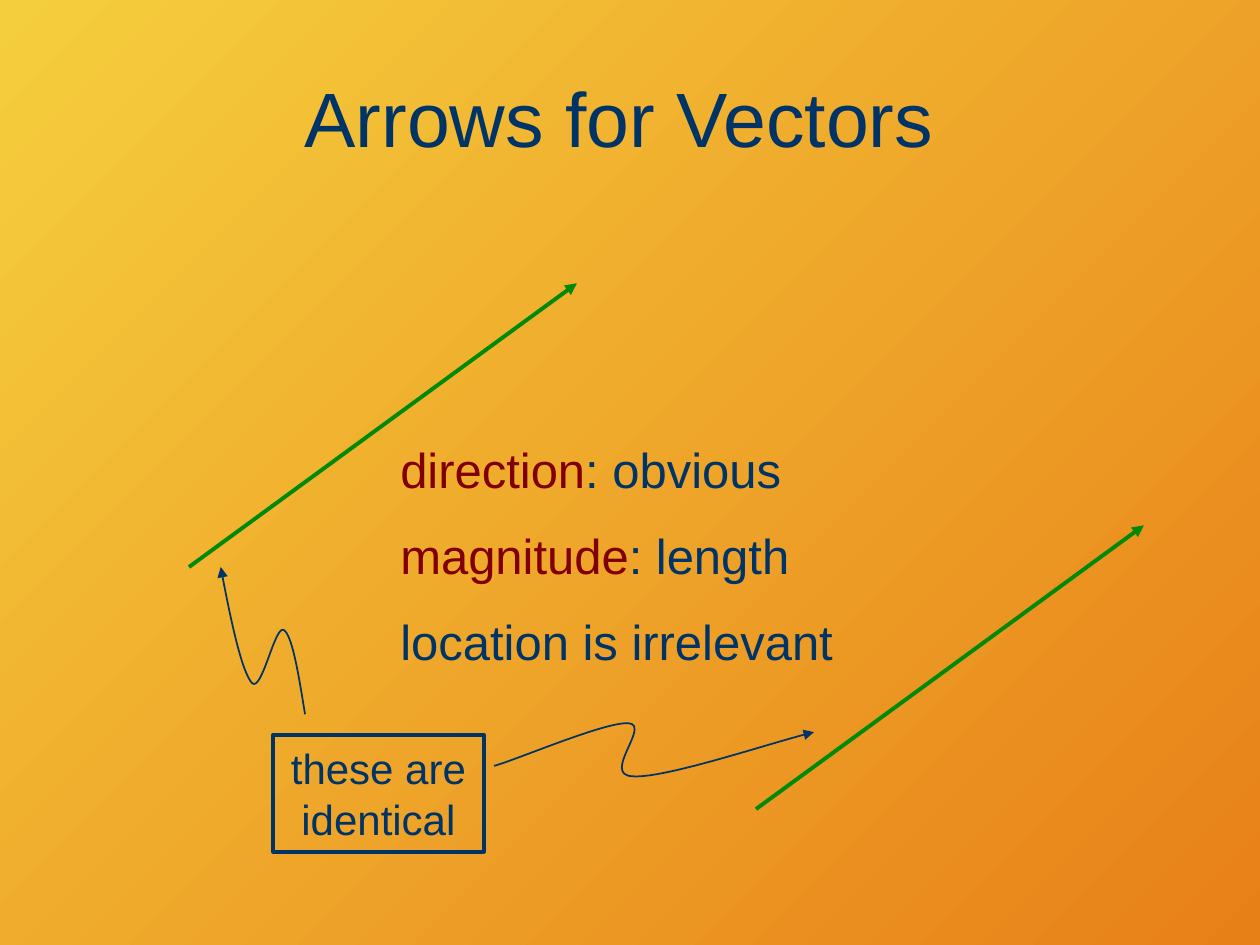
from dataclasses import dataclass

import pptx
import pptx.dml.color
import pptx.enum.shapes
import pptx.enum.text
import pptx.oxml.ns
import pptx.oxml.xmlchemy
import pptx.util

Cm = pptx.util.Cm
Point = tuple[float, float]
PARAGRAPH_ALIGN = pptx.enum.text.PP_ALIGN


@dataclass(frozen=True)
class Theme:
    font: str = "Arial"
    navy: str = "003366"
    maroon: str = "800000"
    green: str = "008901"
    yellow: str = "F5CE3D"
    orange: str = "E88018"
    title_size: float = 44
    body_size: float = 28
    label_size: float = 24
    thick_line: float = 2.25
    thin_line: float = 1


@dataclass(frozen=True)
class Run:
    text: str
    color: str


@dataclass(frozen=True)
class Box:
    left: float
    top: float
    width: float
    height: float

    def lengths(self) -> list[int]:
        return [Cm(value) for value in (self.left, self.top, self.width, self.height)]


THEME = Theme()

# Content, in centimetres
TITLE_BOX = Box(1.27, 0.76, 22.86, 3.18)
PROPERTIES_BOX = Box(7.82, 8.69, 11.23, 5.0)
LABEL_BOX = Box(5.51, 14.81, 4.24, 2.36)
VECTOR = (7.82, -5.72)
VECTOR_STARTS = [(3.81, 11.43), (15.24, 16.31)]
PROPERTIES = [
    [Run("direction", THEME.maroon), Run(": obvious", THEME.navy)],
    [Run("magnitude", THEME.maroon), Run(": length", THEME.navy)],
    [Run("location is irrelevant", THEME.navy)],
]
# Each pointer is a start point followed by triples of Bézier points
POINTERS = [
    [(6.15, 14.4),
     (6.02, 13.59), (5.89, 12.8), (5.72, 12.7),
     (5.54, 12.6), (5.28, 13.97), (5.08, 13.77),
     (4.88, 13.54), (4.65, 12.5), (4.45, 11.43)],
    [(9.96, 15.44),
     (10.41, 15.32), (12.19, 14.55), (12.67, 14.58),
     (13.13, 14.61), (12.12, 15.62), (12.75, 15.65),
     (13.36, 15.7), (15.65, 14.94), (16.41, 14.76)],
]


def rgb(color: str) -> pptx.dml.color.RGBColor:
    return pptx.dml.color.RGBColor.from_string(color)


def new_element(tag: str):
    return pptx.oxml.xmlchemy.OxmlElement(tag)


def write_text(shape, paragraphs: list[list[Run]], *, size: float,
               align=PARAGRAPH_ALIGN.LEFT, gap: float = 0) -> None:
    """Fill a shape with paragraphs, with a gap in points between them."""
    frame = shape.text_frame
    frame.word_wrap = True
    frame.vertical_anchor = pptx.enum.text.MSO_ANCHOR.MIDDLE
    for index, runs in enumerate(paragraphs):
        paragraph = frame.add_paragraph() if index else frame.paragraphs[0]
        paragraph.alignment = align
        paragraph.space_before = pptx.util.Pt(gap if index else 0)
        for item in runs:
            run = paragraph.add_run()
            run.text = item.text
            run.font.name = THEME.font
            run.font.size = pptx.util.Pt(size)
            run.font.color.rgb = rgb(item.color)


def style_line(shape, color: str, width: float) -> None:
    shape.line.color.rgb = rgb(color)
    shape.line.width = pptx.util.Pt(width)


def add_arrowhead(shape) -> None:
    """Put a triangle at the end of the line and remove its shadow."""
    properties = shape.element.spPr
    line = properties.find(pptx.oxml.ns.qn("a:ln"))
    arrowhead = new_element("a:tailEnd")
    arrowhead.set("type", "triangle")
    line.append(arrowhead)
    if properties.find(pptx.oxml.ns.qn("a:effectLst")) is None:
        properties.append(new_element("a:effectLst"))


def add_vector(slide, start: Point) -> None:
    end = (start[0] + VECTOR[0], start[1] + VECTOR[1])
    connector = slide.shapes.add_connector(
        pptx.enum.shapes.MSO_CONNECTOR.STRAIGHT,
        *(Cm(value) for value in start + end))
    style_line(connector, THEME.green, THEME.thick_line)
    add_arrowhead(connector)


def add_pointer(slide, points: list[Point]) -> None:
    start, *rest = [(Cm(x), Cm(y)) for x, y in points]
    builder = slide.shapes.build_freeform(*start)
    builder.add_line_segments(rest, close=False)
    shape = builder.convert_to_shape()
    # Turn every three straight segments into one cubic curve
    segments = list(shape.element.iter(pptx.oxml.ns.qn("a:lnTo")))
    for first in range(0, len(segments), 3):
        curve = new_element("a:cubicBezTo")
        segments[first].addprevious(curve)
        for segment in segments[first:first + 3]:
            curve.append(segment[0])
            segment.getparent().remove(segment)
    shape.fill.background()
    shape.shadow.inherit = False
    style_line(shape, THEME.navy, THEME.thin_line)
    add_arrowhead(shape)


def add_background(slide) -> None:
    fill = slide.background.fill
    fill.gradient()
    fill.gradient_angle = 315
    for stop, color, position in zip(fill.gradient_stops, (THEME.yellow, THEME.orange), (0, 1)):
        stop.color.rgb = rgb(color)
        stop.position = position


def main() -> None:
    presentation = pptx.Presentation()
    presentation.slide_width, presentation.slide_height = Cm(25.4), Cm(19.05)
    slide = presentation.slides.add_slide(presentation.slide_layouts[5])
    add_background(slide)

    # Title
    title = slide.shapes.title
    title.left, title.top, title.width, title.height = TITLE_BOX.lengths()
    write_text(title, [[Run("Arrows for Vectors ", THEME.navy)]],
               size=THEME.title_size, align=PARAGRAPH_ALIGN.CENTER)

    # Two equal vectors and their properties
    for start in VECTOR_STARTS:
        add_vector(slide, start)
    properties = slide.shapes.add_textbox(*PROPERTIES_BOX.lengths())
    write_text(properties, PROPERTIES, size=THEME.body_size, gap=15.5)

    # Framed label with pointers to both vectors
    label = slide.shapes.add_shape(
        pptx.enum.shapes.MSO_SHAPE.RECTANGLE, *LABEL_BOX.lengths())
    label.fill.background()
    label.shadow.inherit = False
    style_line(label, THEME.navy, THEME.thick_line)
    write_text(label, [[Run("these are identical", THEME.navy)]],
               size=THEME.label_size, align=PARAGRAPH_ALIGN.CENTER)
    for points in POINTERS:
        add_pointer(slide, points)

    presentation.save("out.pptx")


if __name__ == "__main__":
    main()
